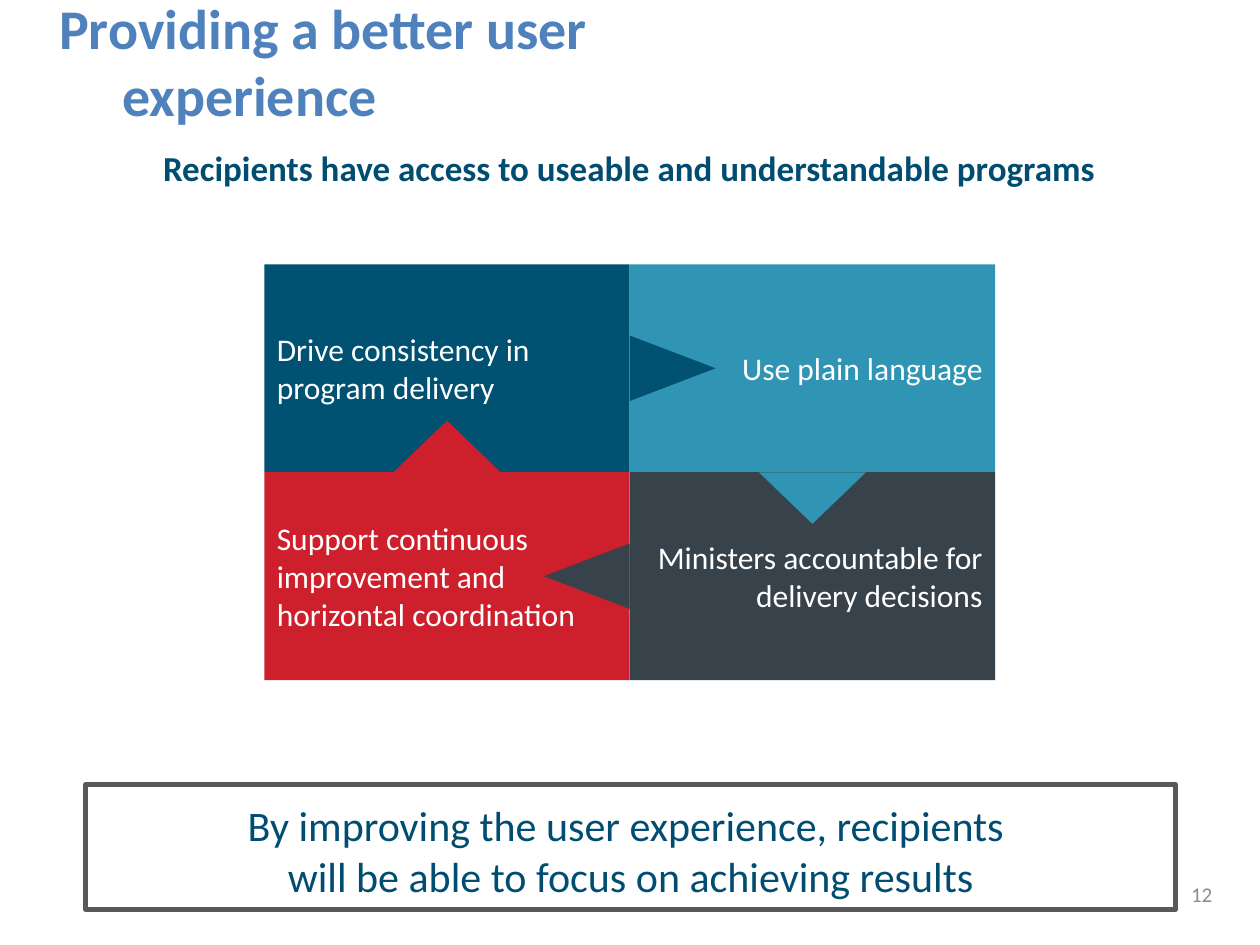
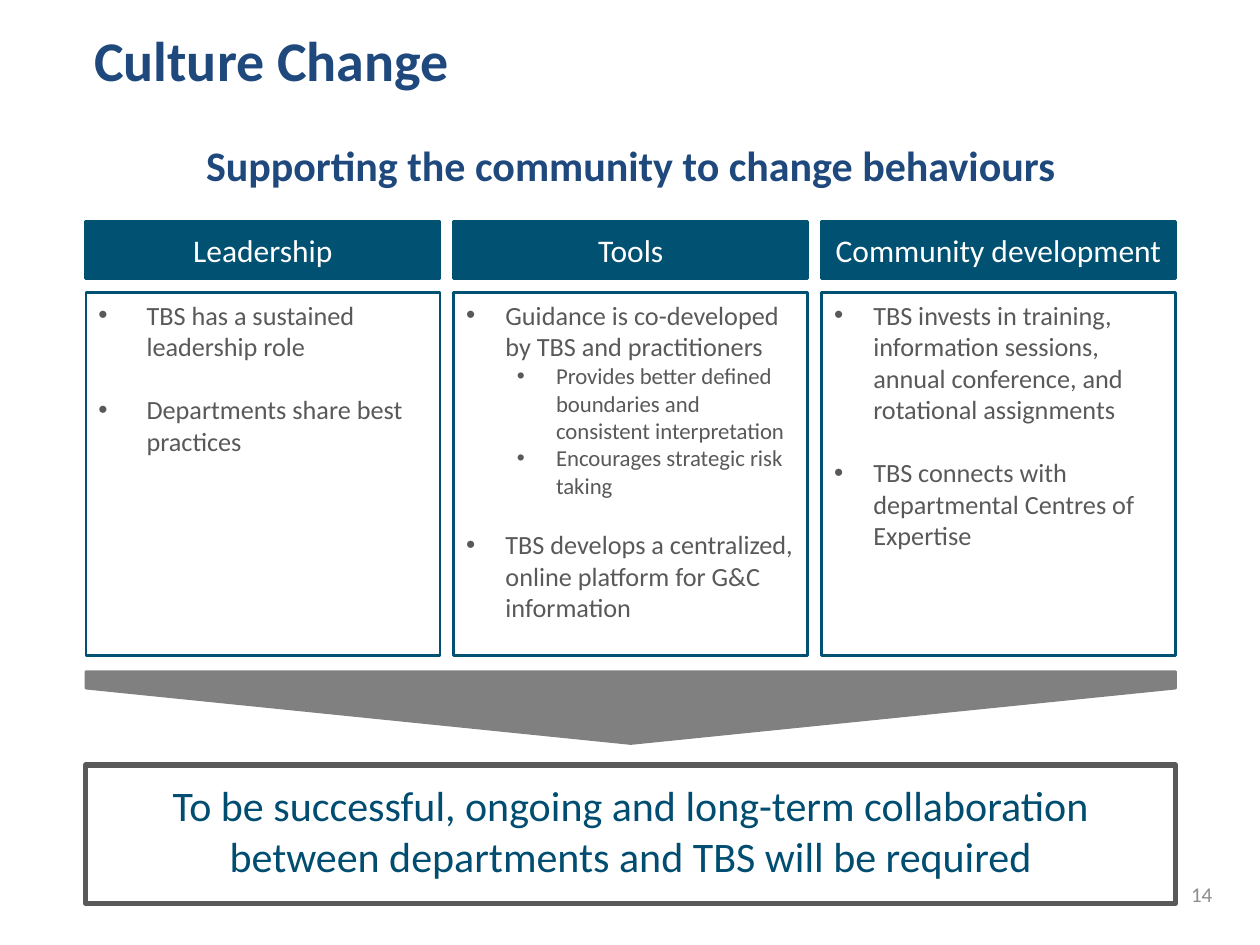
"""Build two slides on user experience and culture change."""
from lxml.etree import SubElement
from pptx import Presentation
from pptx.dml.color import RGBColor
from pptx.enum.shapes import MSO_SHAPE as SHAPE
from pptx.enum.text import MSO_ANCHOR as ANCHOR, MSO_AUTO_SIZE as AUTO, PP_ALIGN as ALIGN
from pptx.oxml.ns import qn
from pptx.util import Cm, Pt

TEAL, INK, GREY, BLUE = "005172", "004D71", "595959", "1F497D"
LIGHT_BLUE, SKY, SLATE, RED = "4F81BD", "3095B4", "37424A", "CD202C"
MID_GREY, PALE_GREY, WHITE = "808080", "8C8C8C", "FFFFFF"
LEFT, WIDTH = 1.73, 21.97


def rgb(value):
    """Turn a hex string into a colour."""
    return RGBColor.from_string(value)


def place(sp, box):
    """Set the position and size of a shape from a box in centimetres."""
    for name, value in zip(("left", "top", "width", "height"), box):
        setattr(sp, name, Cm(value))


def set_frame(sp, anchor=ANCHOR.TOP, inset=None):
    """Prepare the text frame of a shape."""
    tf = sp.text_frame
    values = {"word_wrap": True, "auto_size": AUTO.NONE, "vertical_anchor": anchor}
    if inset is not None:
        sides = ("left", "right", "top", "bottom")
        values.update({f"margin_{side}": Cm(inset) for side in sides})
    for name, value in values.items():
        setattr(tf, name, value)
    return tf


def add_paragraph(tf, text, size, color, align=ALIGN.LEFT, bold=False,
                  level=0, gap=0, hang=0, indent=0, bullet=False):
    """Write one paragraph, using the empty first one if there is one."""
    p = tf.paragraphs[0]
    if p.runs:
        p = tf.add_paragraph()
    pPr = p._p.get_or_add_pPr()
    pPr.set("marL", str(Cm(indent)))
    pPr.set("indent", str(Cm(-hang)))
    values = {"alignment": align, "level": level,
              "space_before": Pt(gap), "space_after": Pt(0)}
    for name, value in values.items():
        setattr(p, name, value)
    if bullet:
        SubElement(pPr, qn("a:buFont")).set("typeface", "Arial")
        SubElement(pPr, qn("a:buChar")).set("char", "•")
    else:
        SubElement(pPr, qn("a:buNone"))
    r = p.add_run()
    r.text = text
    for name, value in {"name": "Calibri", "size": Pt(size), "bold": bold}.items():
        setattr(r.font, name, value)
    r.font.color.rgb = rgb(color)


def add_shape(s, kind, box, fill=None, line=None, weight=1.5):
    """Add a flat preset shape with an optional fill and outline."""
    sp = s.shapes.add_shape(kind, *map(Cm, box))
    sp.shadow.inherit = False
    if fill:
        sp.fill.solid()
        sp.fill.fore_color.rgb = rgb(fill)
    else:
        sp.fill.background()
    set_line(sp, line, weight)
    return sp


def set_line(sp, color, weight):
    """Outline a shape, or leave it without a line."""
    if color:
        sp.line.color.rgb = rgb(color)
        sp.line.width = Pt(weight)
    else:
        sp.line.fill.background()


def add_title(s, text, box, color, hang=0):
    """Fill the title placeholder."""
    sp = s.shapes.title
    place(sp, box)
    tf = set_frame(sp, ANCHOR.MIDDLE, 0)
    add_paragraph(tf, text, 32, color, bold=True, hang=hang, indent=hang)


def add_subtitle(s, text, box, size, color):
    """Fill the first body placeholder with a centred bold line."""
    sp = s.placeholders[1]
    place(sp, box)
    add_paragraph(set_frame(sp), text, size, color, ALIGN.CENTER, bold=True)


def add_message(s, lines, box):
    """Add the outlined closing message."""
    tf = set_frame(add_shape(s, SHAPE.RECTANGLE, box, line=GREY, weight=3), inset=0.3)
    for text in lines:
        add_paragraph(tf, text, 24, INK, ALIGN.CENTER)


def add_number(s, number):
    """Add the page number in the lower right corner."""
    sp = s.shapes.add_textbox(*map(Cm, (18.77, 17.53, 5.92, 1.01)))
    add_paragraph(set_frame(sp, ANCHOR.MIDDLE), number, 12, PALE_GREY, ALIGN.RIGHT)


def add_cycle(s, box, tiles):
    """Add four tiles, each with a triangle pointing to the next one."""
    left, top, width, height = box
    w, h = width / 2, height / 2
    for col, row, color, align, lines, _ in tiles:
        sp = add_shape(s, SHAPE.RECTANGLE, (left + col * w, top + row * h, w, h), color)
        tf = set_frame(sp, ANCHOR.MIDDLE)
        for text in lines:
            add_paragraph(tf, text, 18, WHITE, align)
    directions = {0: (0, -1), 90: (1, 0), 180: (0, 1), 270: (-1, 0)}
    for col, row, color, _, _, angle in tiles:
        dx, dy = directions[angle]
        base, depth = (1.32, 1.73) if dx else (2.16, 1.04)
        x = left + (col + 0.5) * w + dx * (w + depth) / 2
        y = top + (row + 0.5) * h + dy * (h + depth) / 2
        sp = add_shape(s, SHAPE.ISOSCELES_TRIANGLE,
                       (x - base / 2, y - depth / 2, base, depth), color)
        sp.rotation = angle


def add_column(s, sp, box, heading, items, hang):
    """Add a heading bar over an outlined bullet list."""
    left, top, width, height = box
    bar = add_shape(s, SHAPE.RECTANGLE, (left, top, width, 1.14), TEAL, TEAL)
    add_paragraph(set_frame(bar, ANCHOR.MIDDLE), heading, 18, WHITE, ALIGN.CENTER)
    place(sp, (left, top + 1.43, width, height - 1.43))
    set_line(sp, TEAL, 1.5)
    tf = set_frame(sp)
    for text, level, gap in items:
        add_paragraph(tf, text, 15 - 2 * level, GREY, level=level, gap=gap,
                      hang=hang, indent=hang + level * 1.02, bullet=True)


def add_funnel(s, box):
    """Add a wide band that points down."""
    left, top, width, height = box
    x, y = left + width / 2, top + height / 2
    sp = add_shape(s, SHAPE.PENTAGON, (x - height / 2, y - width / 2, height, width),
                   MID_GREY, MID_GREY)
    sp.adjustments[0] = 0.77
    sp.rotation = 90


def build_experience(prs):
    """Build the slide on user experience."""
    s = prs.slides.add_slide(prs.slide_layouts[1])
    add_title(s, "Providing a better user experience", (1.19, 0, 14, 2.44), LIGHT_BLUE, 1.27)
    add_subtitle(s, "Recipients have access to useable and understandable programs",
                 (1.7, 2.82, WIDTH, 1.7), 20, INK)
    add_cycle(s, (5.33, 5.33, 14.73, 8.38), [
        (0, 0, TEAL, ALIGN.LEFT, ["Drive consistency in program delivery"], 90),
        (1, 0, SKY, ALIGN.RIGHT, ["Use plain language"], 180),
        (1, 1, SLATE, ALIGN.RIGHT, ["Ministers accountable for delivery decisions"], 270),
        (0, 1, RED, ALIGN.LEFT,
         ["Support continuous improvement and", "horizontal coordination"], 0),
    ])
    add_message(s, ["By improving the user experience, recipients ",
                    "will be able to focus on achieving results"],
                (LEFT, 15.82, WIDTH, 2.51))
    add_number(s, "12")


def build_culture(prs):
    """Build the slide on culture change."""
    s = prs.slides.add_slide(prs.slide_layouts[4])
    add_title(s, "Culture Change", (1.9, -0.03, 14, 2.44), BLUE)
    add_subtitle(s, "Supporting the community to change behaviours",
                 (LEFT, 2.69, WIDTH, 1.27), 24, BLUE)
    columns = [
        ("Leadership", 0.97, [
            ("TBS has a sustained leadership role", 0, 0),
            ("Departments share best practices", 0, 18)]),
        ("Tools", 0.79, [
            ("Guidance is co-developed by TBS and practitioners", 0, 0),
            ("Provides better defined boundaries and consistent interpretation", 1, 0),
            ("Encourages strategic risk taking", 1, 0),
            ("TBS develops a centralized, online platform for G&C information", 0, 17)]),
        ("Community development", 0.79, [
            ("TBS invests in training, information sessions, annual conference, "
             "and rotational assignments", 0, 0),
            ("TBS connects with departmental Centres of Expertise", 0, 18)]),
    ]
    width = 7.14
    step = (WIDTH - width) / (len(columns) - 1)
    for i, (heading, hang, items) in enumerate(columns):
        add_column(s, s.placeholders[i + 2], (LEFT + i * step, 4.47, width, 8.74),
                   heading, items, hang)
    add_funnel(s, (LEFT, 13.54, WIDTH, 1.45))
    add_message(s, ["To be successful, ongoing and long-term collaboration "
                    "between departments and TBS will be required"],
                (LEFT, 15.42, WIDTH, 2.79))
    add_number(s, "14")


def main():
    """Build and save the presentation."""
    prs = Presentation()
    prs.slide_width, prs.slide_height = Cm(25.4), Cm(19.05)
    build_experience(prs)
    build_culture(prs)
    prs.save("out.pptx")


if __name__ == "__main__":
    main()
